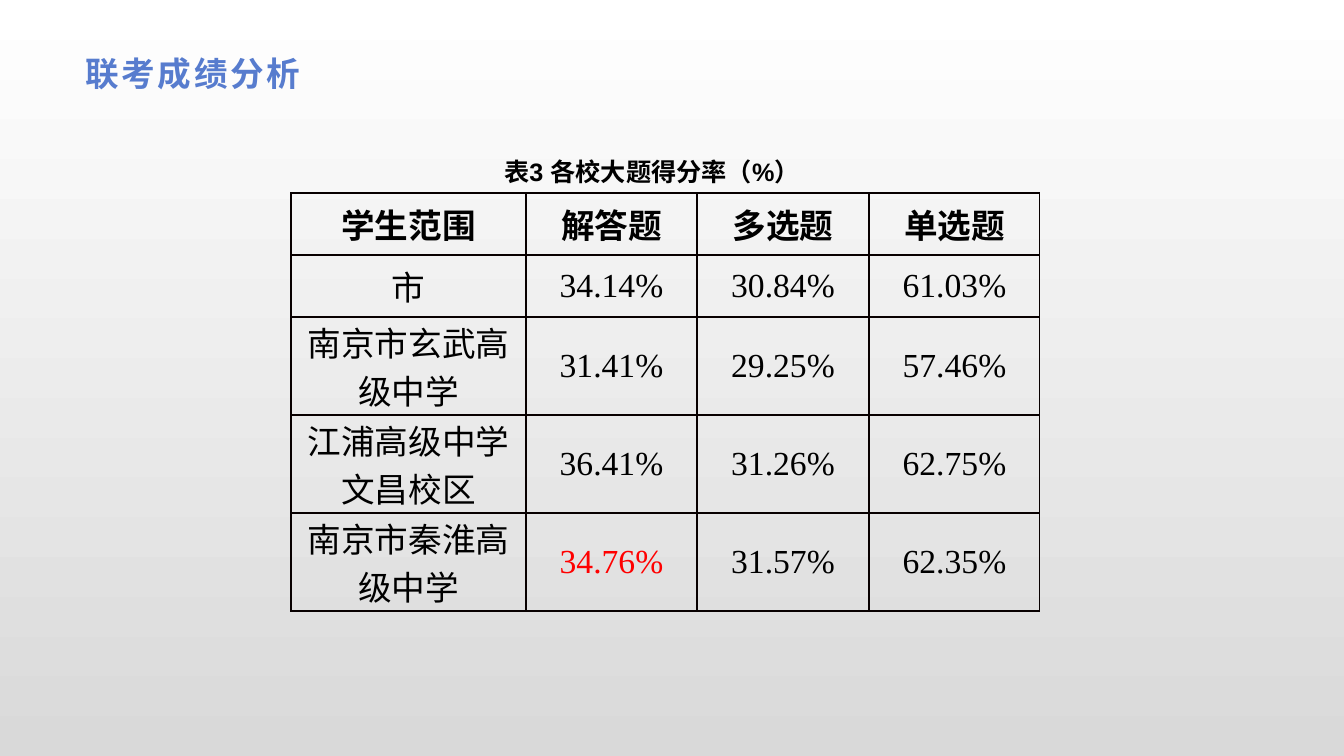
import dataclasses

import lxml.etree
import pptx
import pptx.dml.color
import pptx.enum.text
import pptx.oxml.ns
import pptx.util

EMU_PER_PX = 914400 / 100.8
ALIGN = pptx.enum.text.PP_ALIGN
MIDDLE = pptx.enum.text.MSO_ANCHOR.MIDDLE


@dataclasses.dataclass(frozen=True)
class Theme:
    background_top: str = "FFFFFF"
    background_bottom: str = "D9D9D9"
    title_color: str = "577CCE"
    text_color: str = "000000"
    highlight: str = "FF0000"
    border: str = "080000"
    title_size: int = 24
    caption_size: int = 18
    cell_size: int = 24
    heading_font: str = "Arial"
    number_font: str = "Times New Roman"
    chinese_font: str = "Noto Sans CJK SC"


THEME = Theme()

HEADER = ["学生范围", "解答题", "多选题", "单选题"]
SCORE_RATES = [
    ["市", "34.14%", "30.84%", "61.03%"],
    ["南京市玄武高级中学", "31.41%", "29.25%", "57.46%"],
    ["江浦高级中学文昌校区", "36.41%", "31.26%", "62.75%"],
    ["南京市秦淮高级中学", "34.76%", "31.57%", "62.35%"],
]
HIGHLIGHTED = (4, 1)
COLUMN_WIDTHS = [235, 171, 172, 171]
# One-line rows first, then rows with two-line school names
ROW_HEIGHTS = [62, 62, 98, 98, 98]


def px(length):
    return pptx.util.Emu(round(length * EMU_PER_PX))


def rgb(color):
    return pptx.dml.color.RGBColor.from_string(color)


def add_run(paragraph, text, size, color, font, bold=False, spacing=None):
    run = paragraph.add_run()
    run.text = text
    run.font.size = pptx.util.Pt(size)
    run.font.bold = bold
    run.font.name = font
    run.font.color.rgb = rgb(color)
    properties = run.font._element
    east_asian = lxml.etree.SubElement(properties, pptx.oxml.ns.qn("a:ea"))
    east_asian.set("typeface", THEME.chinese_font)
    if spacing is not None:
        properties.set("spc", str(spacing))


def add_text(slide, box, text, size, color, alignment, spacing=None):
    shape = slide.shapes.add_textbox(*map(px, box))
    frame = shape.text_frame
    frame.word_wrap = True
    paragraph = frame.paragraphs[0]
    paragraph.alignment = alignment
    add_run(paragraph, text, size, color, THEME.heading_font, True, spacing)
    return frame


def set_background(slide):
    fill = slide.background.fill
    fill.gradient()
    fill.gradient_angle = 270
    colors = (THEME.background_top, THEME.background_bottom)
    for stop, position, color in zip(fill.gradient_stops, (0, 1), colors):
        stop.position = position
        stop.color.rgb = rgb(color)


def add_title(slide, box):
    frame = add_text(slide, box, "联考成绩分析", THEME.title_size,
                     THEME.title_color, ALIGN.LEFT, 200)
    frame.margin_left, frame.margin_right = px(11), px(8)
    frame.margin_top = frame.margin_bottom = px(4)


def set_borders(cell):
    properties = cell._tc.get_or_add_tcPr()
    for position, side in enumerate(("a:lnL", "a:lnR", "a:lnT", "a:lnB")):
        line = lxml.etree.Element(pptx.oxml.ns.qn(side), w="12700")
        fill = lxml.etree.SubElement(line, pptx.oxml.ns.qn("a:solidFill"))
        lxml.etree.SubElement(fill, pptx.oxml.ns.qn("a:srgbClr"), val=THEME.border)
        properties.insert(position, line)


def add_cell(cell, text, color, font, bold):
    cell.fill.background()
    set_borders(cell)
    cell.vertical_anchor = MIDDLE
    cell.margin_left = cell.margin_right = px(7)
    cell.margin_top = cell.margin_bottom = 0
    paragraph = cell.text_frame.paragraphs[0]
    paragraph.alignment = ALIGN.CENTER
    add_run(paragraph, text, THEME.cell_size, color, font, bold)


def add_score_table(slide, left, top):
    rows = [HEADER] + SCORE_RATES
    # Caption above the table
    add_text(slide, (left, top - 42, 722, 137), "表3 各校大题得分率（%）",
             THEME.caption_size, THEME.text_color, ALIGN.CENTER)
    # Score rates by school
    table = slide.shapes.add_table(
        len(rows), len(HEADER), px(left), px(top),
        px(sum(COLUMN_WIDTHS)), px(sum(ROW_HEIGHTS))).table
    table.horz_banding = False
    for column, width in zip(table.columns, COLUMN_WIDTHS):
        column.width = px(width)
    for row_index, row in enumerate(rows):
        table.rows[row_index].height = px(ROW_HEIGHTS[row_index])
        for column_index, text in enumerate(row):
            position = (row_index, column_index)
            color = THEME.highlight if position == HIGHLIGHTED else THEME.text_color
            font = THEME.number_font if column_index else THEME.chinese_font
            add_cell(table.cell(*position), text, color, font, row_index == 0)


def main():
    presentation = pptx.Presentation()
    presentation.slide_width, presentation.slide_height = px(1344), px(756)
    slide = presentation.slides.add_slide(presentation.slide_layouts[6])
    set_background(slide)
    add_score_table(slide, 291, 193)
    add_title(slide, (74, 49, 1196, 48))
    presentation.save("out.pptx")


if __name__ == "__main__":
    main()
